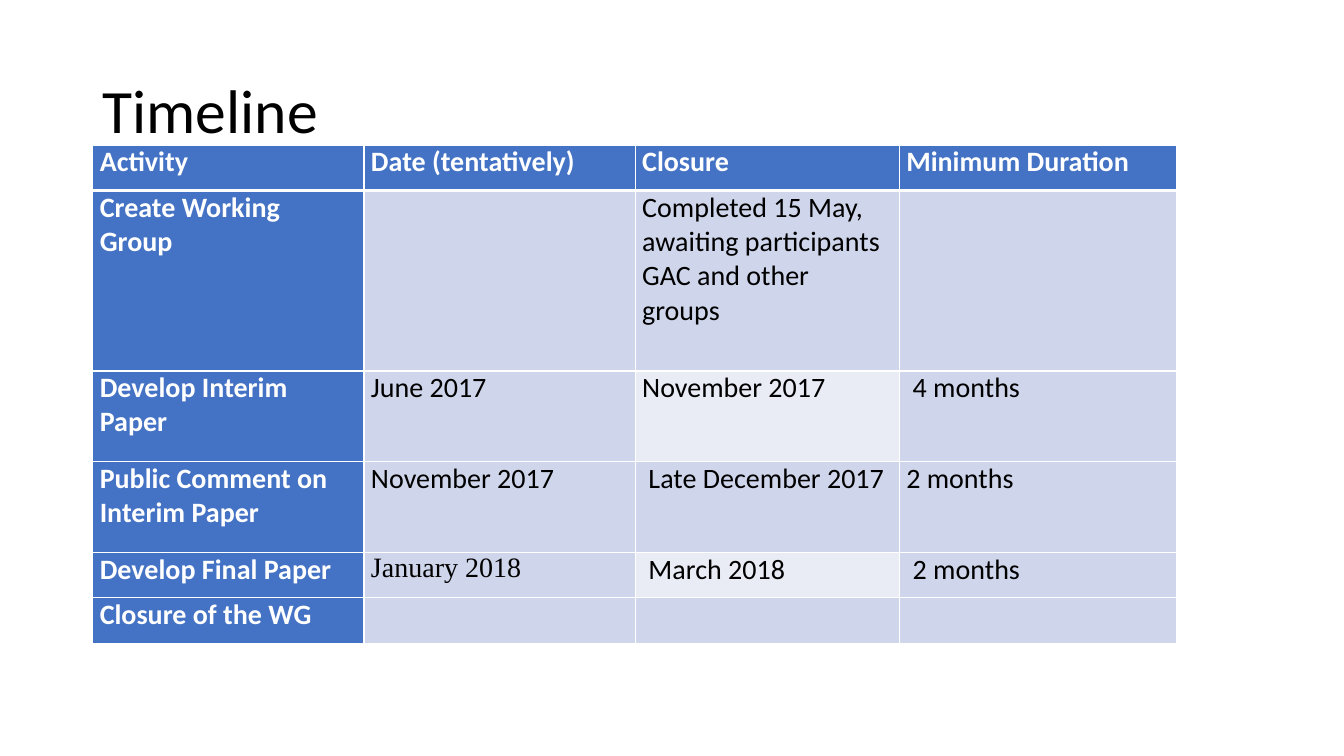
from lxml.etree import SubElement
from pptx import Presentation
from pptx.dml.color import RGBColor
from pptx.enum.text import MSO_ANCHOR as Anchor
from pptx.oxml.ns import qn
from pptx.util import Inches, Pt


def color(hex_code):
    return RGBColor.from_string(hex_code)


class TimelineSlide:
    """Holds the slide and its style, and adds each kind of element."""

    font = "Calibri"
    white, black = "FFFFFF", "000000"
    header_fill, band_fill, light_fill = "4472C4", "CFD5EA", "E9EBF5"

    def __init__(self, deck):
        self.slide = deck.slides.add_slide(deck.slide_layouts[6])

    def run(self, paragraph, text, size, hex_code, bold=False, font=None):
        run = paragraph.add_run()
        run.text = text
        run.font.size = Pt(size)
        run.font.name = font or self.font
        run.font.bold = bold
        run.font.color.rgb = color(hex_code)

    def title(self, text, left, top, width, height):
        box = self.slide.shapes.add_textbox(
            Inches(left), Inches(top), Inches(width), Inches(height))
        frame = box.text_frame
        frame.word_wrap = True
        frame.vertical_anchor = Anchor.MIDDLE
        heading = frame.paragraphs[0]
        heading.line_spacing = 0.9
        self.run(heading, text, 44, self.black)

    def borders(self, cell, top, bottom):
        properties = cell._tc.get_or_add_tcPr()
        for side, points in (("L", 1), ("R", 1), ("T", top), ("B", bottom)):
            line = SubElement(properties, qn(f"a:ln{side}"), w=str(Pt(points)))
            fill = SubElement(line, qn("a:solidFill"))
            SubElement(fill, qn("a:srgbClr"), val=self.white)

    def cell(self, cell, text, fill, hex_code, bold, font, top, bottom):
        cell.margin_left = cell.margin_right = Inches(0.07)
        cell.margin_top = cell.margin_bottom = 0
        self.borders(cell, top, bottom)
        cell.fill.solid()
        cell.fill.fore_color.rgb = color(fill)
        if text:
            self.run(cell.text_frame.paragraphs[0], text, 20, hex_code, bold, font)

    def table(self, rows, left, top, widths, heights, special_fonts):
        table = self.slide.shapes.add_table(
            len(rows), len(widths), Inches(left), Inches(top),
            Inches(sum(widths)), Inches(sum(heights))).table
        table.horz_banding = False
        for column, width in zip(table.columns, widths):
            column.width = Inches(width)
        for r, (texts, height) in enumerate(zip(rows, heights)):
            table.rows[r].height = Inches(height)
            for c, text in enumerate(texts):
                heading = r == 0 or c == 0
                light = c == 2 and r % 2 == 0
                body_fill = self.light_fill if light else self.band_fill
                self.cell(
                    table.cell(r, c), text,
                    fill=self.header_fill if heading else body_fill,
                    hex_code=self.white if heading else self.black,
                    bold=heading,
                    font=special_fonts.get(text),
                    top=3 if r == 1 else 1,
                    bottom=3 if r == 0 else 1)


def main():
    deck = Presentation()
    deck.slide_width, deck.slide_height = Inches(13.33), Inches(7.5)
    timeline = TimelineSlide(deck)
    timeline.title("Timeline", 0.92, 0.4, 11.5, 1.45)
    activities = [
        ("Activity", "Date (tentatively)", "Closure", "Minimum Duration"),
        ("Create Working Group", "",
         "Completed 15 May, awaiting participants GAC and other groups", ""),
        ("Develop Interim Paper", "June 2017", "November 2017", " 4 months"),
        ("Public Comment on Interim Paper", "November 2017",
         " Late December 2017", "2 months"),
        ("Develop Final Paper", "January 2018", " March 2018", " 2 months"),
        ("Closure of the WG", "", "", ""),
    ]
    timeline.table(
        activities, 0.92, 1.44,
        widths=[2.69, 2.69, 2.62, 2.75],
        heights=[0.45, 1.79, 0.9, 0.9, 0.45, 0.45],
        special_fonts={"January 2018": "Times New Roman"})
    deck.save("out.pptx")


if __name__ == "__main__":
    main()
